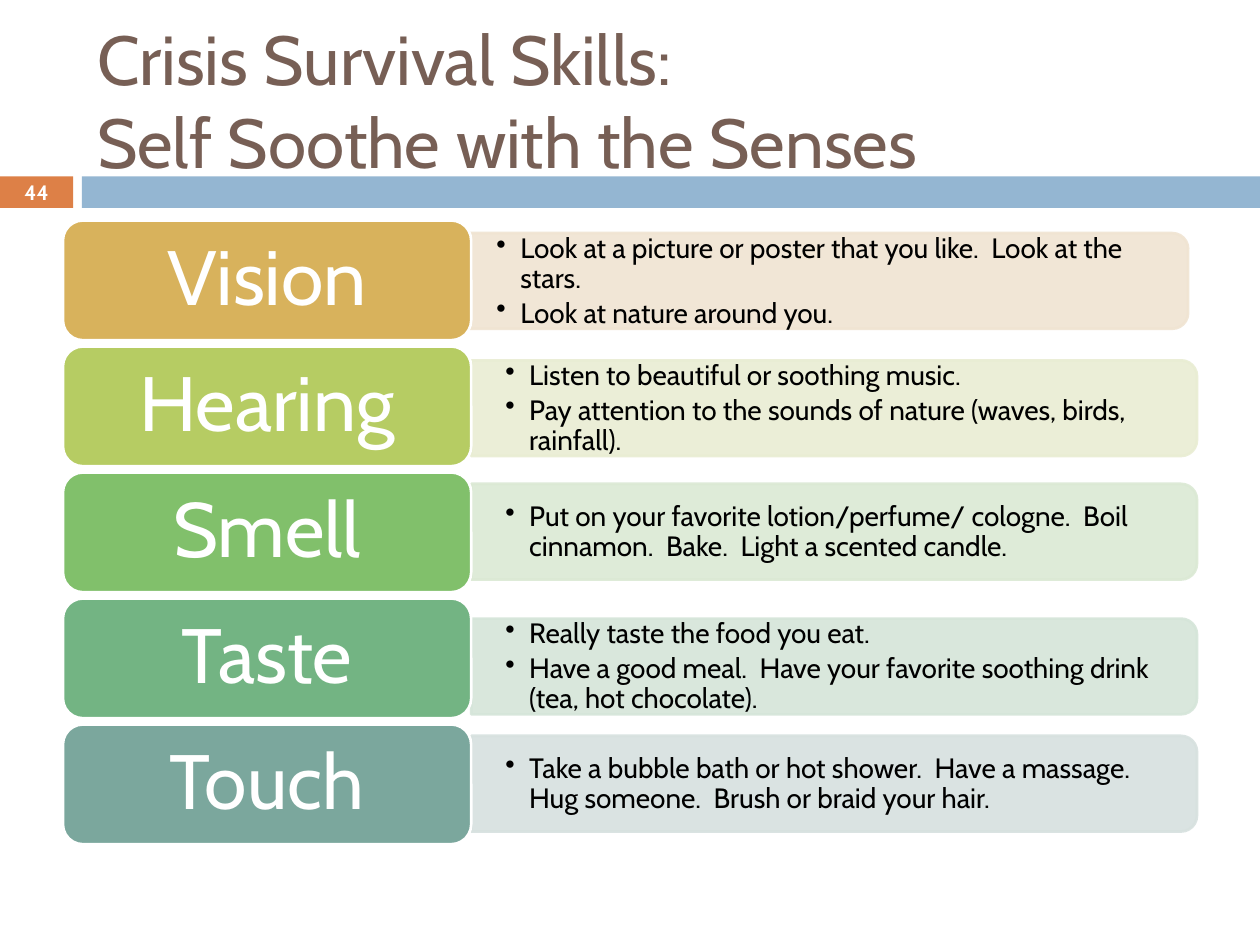
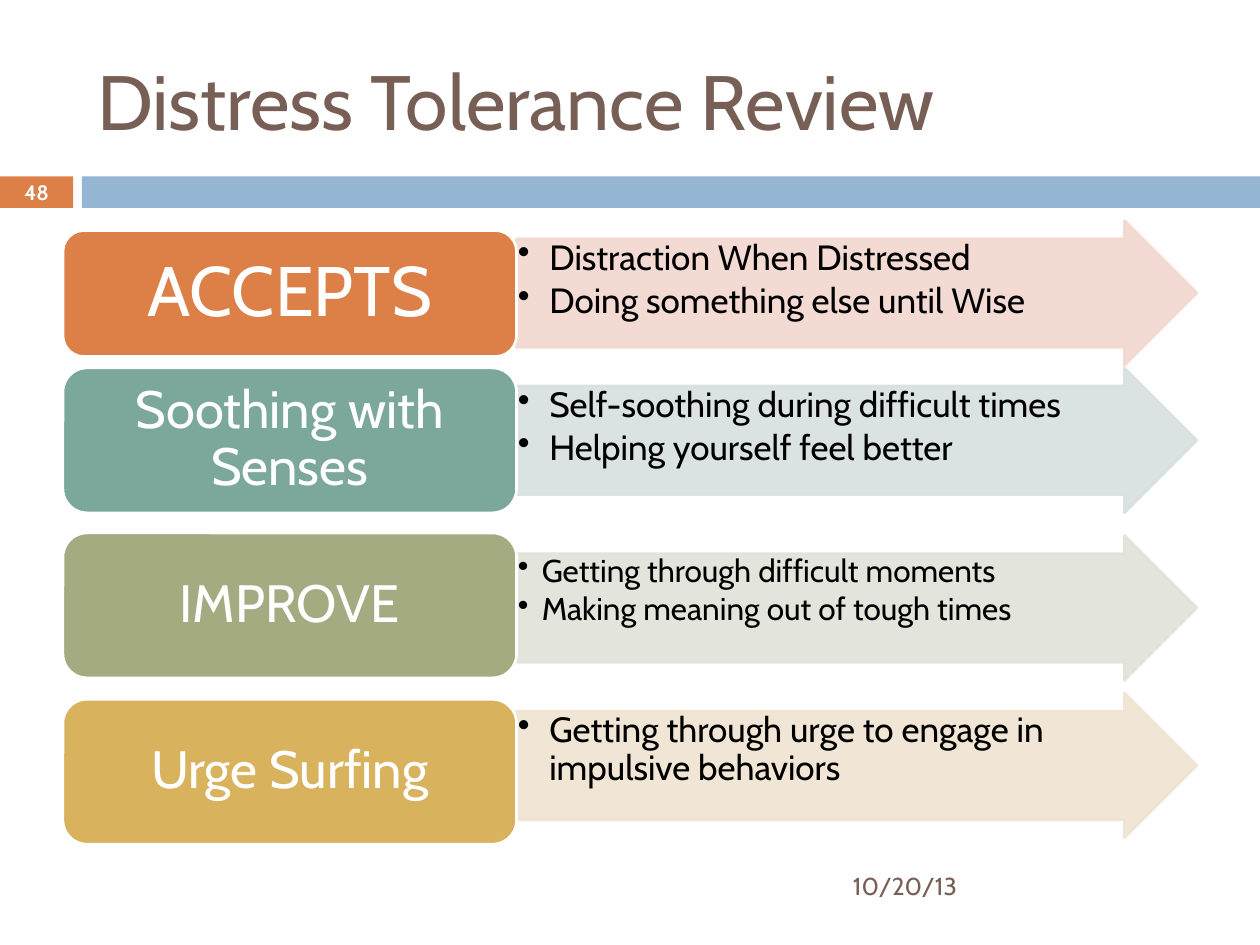
from lxml.etree import SubElement
from pptx import Presentation
from pptx.dml.color import RGBColor
from pptx.enum.shapes import MSO_SHAPE as SHAPE
from pptx.enum.text import MSO_ANCHOR as ANCHOR, MSO_AUTO_SIZE as AUTO, PP_ALIGN as ALIGN
from pptx.oxml.ns import qn
from pptx.util import Emu, Pt

PX = 9144  # 100 px to the inch
FONT = "Cabin"

WHITE = RGBColor(0xFF, 0xFF, 0xFF)
BLACK = RGBColor(0x00, 0x00, 0x00)
BROWN = RGBColor(0x77, 0x5F, 0x55)
BLUE = RGBColor(0x94, 0xB6, 0xD2)
ORANGE = RGBColor(0xDD, 0x80, 0x47)
GOLD = RGBColor(0xD8, 0xB2, 0x5C)
LIME = RGBColor(0xB6, 0xCC, 0x63)
GREEN = RGBColor(0x81, 0xC0, 0x6B)
JADE = RGBColor(0x73, 0xB4, 0x83)
TEAL = RGBColor(0x7B, 0xA7, 0x9D)
OLIVE = RGBColor(0xA5, 0xAB, 0x81)
PALE_ORANGE = RGBColor(0xF2, 0xD8, 0xCF)
PALE_GOLD = RGBColor(0xF0, 0xE4, 0xD2)
PALE_LIME = RGBColor(0xE9, 0xED, 0xD3)
PALE_GREEN = RGBColor(0xDB, 0xE9, 0xD4)
PALE_JADE = RGBColor(0xD5, 0xE5, 0xD9)
PALE_TEAL = RGBColor(0xD7, 0xE1, 0xDF)
PALE_OLIVE = RGBColor(0xE1, 0xE2, 0xD8)

# label, colour, pale colour, left and top of the bar, bullets
SENSES = [
    ("Vision", GOLD, PALE_GOLD, 367, 185,
     ["Look at a picture or poster that you like.  Look at the stars.",
      "Look at nature around you."]),
    ("Hearing", LIME, PALE_LIME, 374, 286,
     ["Listen to beautiful or soothing music.",
      "Pay attention to the sounds of nature (waves, birds, rainfall)."]),
    ("Smell", GREEN, PALE_GREEN, 374, 384,
     ["Put on your favorite lotion/perfume/ cologne.  Boil cinnamon.  Bake.  "
      "Light a scented candle."]),
    ("Taste", JADE, PALE_JADE, 374, 491,
     ["Really taste the food you eat.",
      "Have a good meal.  Have your favorite soothing drink (tea, hot chocolate)."]),
    ("Touch", TEAL, PALE_TEAL, 374, 584,
     ["Take a bubble bath or hot shower.  Have a massage. Hug someone.  "
      "Brush or braid your hair."]),
]

# label, its size, colour, pale colour, label top and height, arrow top, bullet size, indent, bullets
SKILLS = [
    ("ACCEPTS", 40, ORANGE, PALE_ORANGE, 183, 100, 175, 20, 25,
     ["Distraction When Distressed", "Doing something else until Wise"]),
    ("Soothing with Senses", 30, TEAL, PALE_TEAL, 292, 115, 292, 20, 25,
     ["Self-soothing during difficult times", "Helping yourself feel better"]),
    ("IMPROVE", 30, OLIVE, PALE_OLIVE, 423, 115, 425, 18, 19,
     ["Getting through difficult moments", "Making meaning out of tough times"]),
    ("Urge Surfing", 30, GOLD, PALE_GOLD, 555, 115, 550, 20, 25,
     ["Getting through urge to engage in impulsive behaviors"]),
]


def px(*lengths):
    return [Emu(n * PX) for n in lengths]


def set_frame(tf, anchor, insets=(10, 5)):
    x, y = px(*insets)
    settings = dict(word_wrap=True, auto_size=AUTO.NONE, vertical_anchor=anchor,
                    margin_left=x, margin_right=x, margin_top=y, margin_bottom=y)
    for name, value in settings.items():
        setattr(tf, name, value)


def add_run(p, text, size, color, bold=False):
    r = p.add_run()
    r.text = text
    for name, value in dict(name=FONT, size=Pt(size), bold=bold).items():
        setattr(r.font, name, value)
    r.font.color.rgb = color


def add_box(s, kind, box, fill, line=None):
    sp = s.shapes.add_shape(kind, *px(*box))
    sp.shadow.inherit = False
    sp.fill.solid()
    sp.fill.fore_color.rgb = fill
    if line is None:
        sp.line.fill.background()
    else:
        sp.line.color.rgb = line
        sp.line.width = Pt(1.5)
    return sp


def add_pale_box(s, kind, box, color):
    """Shape whose fill and line are slightly see-through."""
    sp = add_box(s, kind, box, color, color)
    for clr in sp._element.spPr.iter(qn("a:srgbClr")):
        SubElement(clr, qn("a:alpha"), val="90000")
    return sp


def add_label(s, box, text, size, color, insets):
    sp = add_box(s, SHAPE.ROUNDED_RECTANGLE, box, color, WHITE)
    set_frame(sp.text_frame, ANCHOR.MIDDLE, insets)
    p = sp.text_frame.paragraphs[0]
    p.alignment = ALIGN.CENTER
    p.line_spacing = 0.9
    add_run(p, text, size, WHITE)


def add_bullets(tf, items, size, indent):
    for i, item in enumerate(items):
        p = tf.add_paragraph() if i else tf.paragraphs[0]
        p.level = 1
        p.alignment = ALIGN.LEFT
        p.line_spacing = 0.9
        p.space_after = Pt(size * 0.15)
        pPr = p._p.get_or_add_pPr()
        pPr.set("marL", str(indent * PX))
        pPr.set("indent", str(-indent * PX))
        SubElement(pPr, qn("a:buChar"), char="•")
        add_run(p, item, size, BLACK)


def add_base_slide(prs, title_lines, title_size, number):
    """Slide with the title, the band and the page number."""
    s = prs.slides.add_slide(prs.slide_layouts[5])
    add_box(s, SHAPE.RECTANGLE, (65, 140, 935, 25), BLUE)
    tab = add_box(s, SHAPE.RECTANGLE, (0, 140, 58, 25), ORANGE)
    set_frame(tab.text_frame, ANCHOR.MIDDLE)
    p = tab.text_frame.paragraphs[0]
    p.alignment = ALIGN.CENTER
    add_run(p, number, 11.9, WHITE, bold=True)

    title = s.shapes.title
    title.left, title.top, title.width, title.height = px(67, 25, 892, 108)
    set_frame(title.text_frame, ANCHOR.MIDDLE)
    p = title.text_frame.paragraphs[0]
    p.alignment = ALIGN.LEFT
    for i, line in enumerate(title_lines):
        if i:
            p.add_line_break()
        add_run(p, line, title_size, BROWN)
    return s


def add_sense_row(s, label_top, label, color, pale, left, top, items):
    width, height = 576, 76
    shift = (width - height) // 2  # the bar is drawn upright, then turned
    bar = add_pale_box(s, SHAPE.ROUND_2_SAME_RECTANGLE,
                       (left + shift, top - shift, height, width), pale)
    bar.rotation = 90
    tf = s.shapes.add_textbox(*px(left, top + 4, width - 4, height - 7)).text_frame
    set_frame(tf, ANCHOR.MIDDLE, (27, 14))
    add_bullets(tf, items, 16, 19)
    add_label(s, (50, label_top, 324, 95), label, 44, color, (18, 9))


def add_skill_row(s, label, size, color, pale, top, height, arrow_top,
                  bullet_size, indent, items):
    arrow = add_pale_box(s, SHAPE.RIGHT_ARROW, (410, arrow_top, 540, 115), pale)
    arrow.adjustments[0] = 0.75
    arrow.adjustments[1] = 0.5
    set_frame(arrow.text_frame, ANCHOR.TOP, (1, 1))
    add_bullets(arrow.text_frame, items, bullet_size, indent)
    insets = (17, 8) if size == 40 else (12, 6)
    add_label(s, (50, top, 360, height), label, size, color, insets)


def add_date(s, text):
    tf = s.shapes.add_textbox(*px(667, 683, 292, 40)).text_frame
    set_frame(tf, ANCHOR.MIDDLE)
    add_run(tf.paragraphs[0], text, 14, BROWN)


def main():
    prs = Presentation()
    prs.slide_width, prs.slide_height = px(1000, 750)

    s = add_base_slide(prs, ["Crisis Survival Skills:", "Self Soothe with the Senses"], 39.6, "44")
    for i, sense in enumerate(SENSES):
        add_sense_row(s, 175 + 100 * i, *sense)

    s = add_base_slide(prs, ["Distress Tolerance Review"], 44, "48")
    for skill in SKILLS:
        add_skill_row(s, *skill)
    add_date(s, "10/20/13")

    prs.save("out.pptx")


if __name__ == "__main__":
    main()
